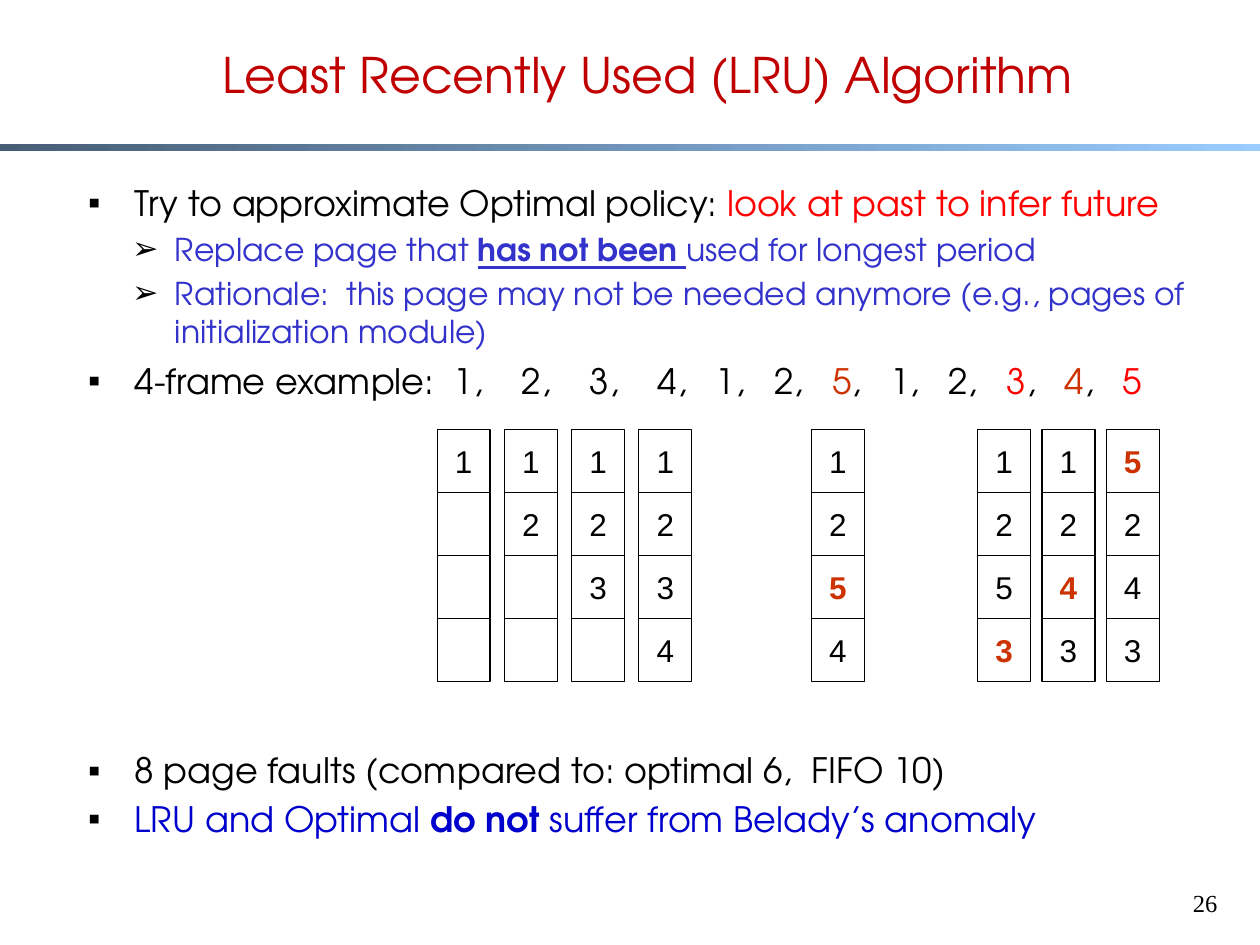
from dataclasses import dataclass

from lxml.etree import SubElement
from pptx import Presentation
from pptx.dml.color import RGBColor
from pptx.enum.shapes import MSO_SHAPE
from pptx.enum.text import MSO_ANCHOR, PP_ALIGN
from pptx.oxml.ns import qn
from pptx.util import Pt


@dataclass(frozen=True)
class Theme:
    """Colours, fonts and type sizes of the slide."""
    black: str = "000000"
    white: str = "FFFFFF"
    title: str = "C00000"
    red: str = "FF0000"
    fault: str = "CC3300"
    detail: str = "3333CC"
    conclusion: str = "0000CC"
    bar_start: str = "475E76"
    bar_end: str = "99CCFF"
    heading_font: str = "TeX Gyre Adventor"
    frame_font: str = "Arial"
    number_font: str = "Times New Roman"
    title_size: int = 28
    point_size: int = 20
    detail_size: int = 18
    number_size: int = 14


THEME = Theme()


def rgb(value):
    """Turn a hex string into a colour."""
    return RGBColor.from_string(value)


def add_text(paragraph, text, *, size=THEME.point_size, color=THEME.black,
             font=THEME.heading_font, bold=False, underline=False, tracking=0):
    """Append a formatted run to a paragraph."""
    run = paragraph.add_run()
    run.text = text
    run.font.name = font
    run.font.size = Pt(size)
    run.font.bold = bold
    run.font.underline = underline
    run.font.color.rgb = rgb(color)
    if tracking:
        run.font._rPr.set("spc", str(round(tracking * 100)))


def add_box(slide, box, anchor=MSO_ANCHOR.TOP):
    """Add a wrapping text box and return its text frame."""
    frame = slide.shapes.add_textbox(*map(Pt, box)).text_frame
    frame.word_wrap = True
    frame.vertical_anchor = anchor
    return frame


def add_rectangle(slide, box):
    """Add a rectangle without shadow."""
    rectangle = slide.shapes.add_shape(MSO_SHAPE.RECTANGLE, *map(Pt, box))
    rectangle.shadow.inherit = False
    return rectangle


def set_bullet(paragraph, mark, left, hanging):
    """Give a paragraph a black bullet with a hanging indent."""
    properties = paragraph._p.get_or_add_pPr()
    properties.set("marL", str(Pt(left)))
    properties.set("indent", str(-Pt(hanging)))
    color = SubElement(properties, qn("a:buClr"))
    SubElement(color, qn("a:srgbClr"), val=THEME.black)
    SubElement(properties, qn("a:buFont"), typeface=THEME.frame_font)
    SubElement(properties, qn("a:buChar"), char=mark)


def add_bar(slide, box):
    """Draw the gradient bar below the title."""
    bar = add_rectangle(slide, box)
    bar.line.fill.background()
    bar.fill.gradient()
    bar.fill.gradient_angle = 0
    for stop, color in zip(bar.fill.gradient_stops, (THEME.bar_start, THEME.bar_end)):
        stop.color.rgb = rgb(color)


def add_title(slide, box):
    """Write the slide title."""
    heading = add_box(slide, box, MSO_ANCHOR.MIDDLE).paragraphs[0]
    heading.alignment = PP_ALIGN.CENTER
    add_text(heading, "Least Recently Used (LRU) Algorithm",
             size=THEME.title_size, color=THEME.title)


def add_page_number(slide, box):
    """Write the page number."""
    number = add_box(slide, box).paragraphs[0]
    number.alignment = PP_ALIGN.RIGHT
    add_text(number, "26", size=THEME.number_size, font=THEME.number_font)


def reference_runs():
    """List the runs of the page reference string, spaced by tracking."""
    wide, narrow = 8.3, 5.5
    late_faults = {6: THEME.fault, 9: THEME.red, 10: THEME.fault, 11: THEME.red}
    runs = [("4-frame example:", {}), (" ", {"tracking": narrow})]
    for index, page in enumerate("123412512345"):
        if index:
            runs.append((", ", {"tracking": wide if index < 4 else narrow}))
        runs.append((page, {"color": late_faults.get(index, THEME.black)}))
    return runs


def add_points(slide, box):
    """Write the bulleted points, leaving room for the frames."""
    detail = {"size": THEME.detail_size, "color": THEME.detail}
    conclusion = {"color": THEME.conclusion}
    point_bullet, detail_bullet = ("▪", 26.64, 26.64), ("➢", 49.68, 24.48)
    points = [
        (point_bullet, 6, 1, [
            ("Try to approximate Optimal policy: ", {}),
            ("look at past to infer future", {"color": THEME.red})]),
        (detail_bullet, 3.6, 1, [
            ("Replace page that ", detail),
            ("has not been ", {**detail, "bold": True, "underline": True}),
            ("used for longest period", detail)]),
        (detail_bullet, 3.6, 1, [
            ("Rationale:  this page may not be needed anymore "
             "(e.g., pages of initialization module)", detail)]),
        (point_bullet, 6, 1, reference_runs()),
        (point_bullet, 201, 0.9, [
            ("8 page faults (compared to: optimal 6,  FIFO 10)", {})]),
        (point_bullet, 6, 0.9, [
            ("LRU and Optimal ", conclusion),
            ("do not ", {**conclusion, "bold": True}),
            ("suffer from Belady’s anomaly", conclusion)]),
    ]
    frame = add_box(slide, box)
    for index, (bullet, before, spacing, runs) in enumerate(points):
        point = frame.add_paragraph() if index else frame.paragraphs[0]
        point.level = int(bullet is detail_bullet)
        point.space_before = Pt(before)
        point.line_spacing = spacing
        set_bullet(point, *bullet)
        for text, style in runs:
            add_text(point, text, **style)


def add_memory(slide, box, pages, loaded):
    """Draw one state of the four frames, with the loaded page marked."""
    left, top, width, height = box
    cell_height = height / 4
    for row, page in enumerate(pages.ljust(4)):
        cell = add_rectangle(slide, (left, top + row * cell_height, width, cell_height))
        cell.fill.solid()
        cell.fill.fore_color.rgb = rgb(THEME.white)
        cell.line.color.rgb = rgb(THEME.black)
        cell.line.width = Pt(0.75)
        if page == " ":
            continue
        cell.text_frame.word_wrap = False
        cell.text_frame.vertical_anchor = MSO_ANCHOR.MIDDLE
        label = cell.text_frame.paragraphs[0]
        label.alignment = PP_ALIGN.CENTER
        marked = page == loaded
        add_text(label, page, size=THEME.detail_size, font=THEME.frame_font,
                 bold=marked, color=THEME.fault if marked else THEME.black)


def add_history(slide, box):
    """Draw the frames after each page fault."""
    left, top, _, height = box
    states = [(38.4 * count, "1234"[:count + 1], None) for count in range(4)]
    states.append((213.84, "1254", "5"))
    replacements = [("1253", "3"), ("1243", "4"), ("5243", "5")]
    states += [(308.88 + 36.72 * index, pages, loaded)
               for index, (pages, loaded) in enumerate(replacements)]
    for offset, pages, loaded in states:
        add_memory(slide, (left + offset, top, 30.24, height), pages, loaded)


def main():
    """Build and save the slide."""
    deck = Presentation()
    deck.slide_width, deck.slide_height = Pt(720), Pt(540)
    slide = deck.slides.add_slide(deck.slide_layouts[6])
    add_bar(slide, (0, 82.08, 720, 4.32))
    add_page_number(slide, (653.76, 504, 48.96, 36))
    add_title(slide, (41.76, 9.36, 656.56, 65.52))
    add_points(slide, (43.2, 100.08, 646.56, 407.52))
    add_history(slide, (249.84, 245.52, 412.56, 144))
    deck.save("out.pptx")


if __name__ == "__main__":
    main()
